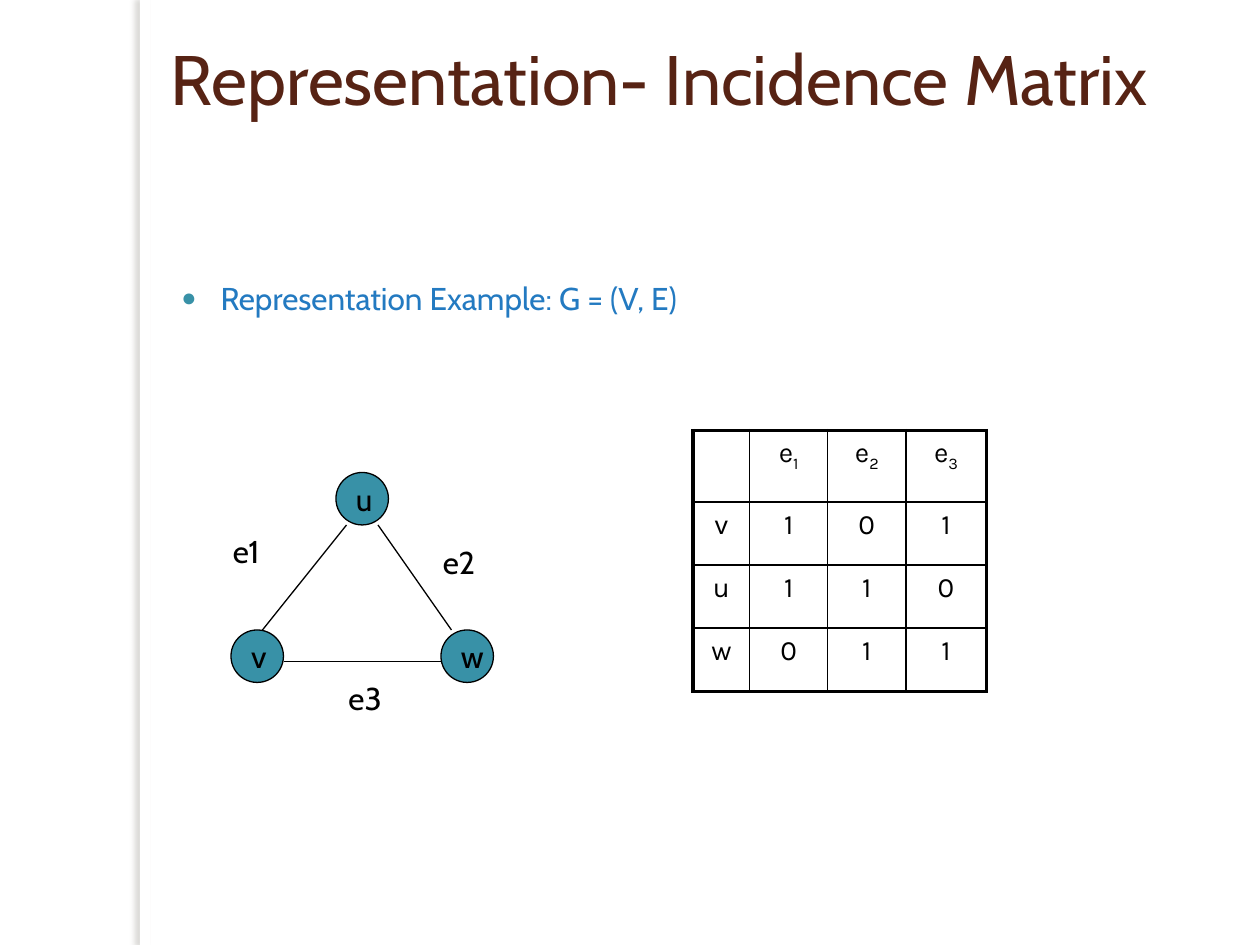
from lxml import etree
from pptx import Presentation
from pptx.dml.color import RGBColor
from pptx.enum.shapes import MSO_CONNECTOR, MSO_SHAPE
from pptx.enum.text import MSO_ANCHOR, MSO_AUTO_SIZE, PP_ALIGN
from pptx.oxml.ns import qn
from pptx.util import Pt

RECTANGLE, ELLIPSE = MSO_SHAPE.RECTANGLE, MSO_SHAPE.OVAL
STRAIGHT = MSO_CONNECTOR.STRAIGHT
TOP, MIDDLE = MSO_ANCHOR.TOP, MSO_ANCHOR.MIDDLE
LEFT, CENTER = PP_ALIGN.LEFT, PP_ALIGN.CENTER
NO_AUTOFIT = MSO_AUTO_SIZE.NONE

BLACK, WHITE, TEAL, BROWN, BLUE = "000000", "FFFFFF", "3891A7", "572314", "237AC1"


def rgb(hex_code):
    return RGBColor.from_string(hex_code)


def child(parent, tag, **attributes):
    element = etree.SubElement(parent, qn(tag))
    for key, value in attributes.items():
        element.set(key, str(value))
    return element


class SlideBuilder:
    text_font, table_font = "Cabin", "Karla"
    label_size, cell_size = 18, 16
    thin, inner, outer = 0.75, 1, 2.25

    def __init__(self, slide):
        self.slide = slide

    def run(self, paragraph, text, size, color, font=None):
        run = paragraph.add_run()
        run.text = text
        run.font.size = Pt(size)
        run.font.name = font or self.text_font
        run.font.color.rgb = rgb(color)
        return run

    def placeholder(self, index, box, text, size, color):
        holder = self.slide.placeholders[index]
        holder.left, holder.top, holder.width, holder.height = map(Pt, box)
        frame = holder.text_frame
        frame.word_wrap = True
        frame.auto_size = NO_AUTOFIT
        frame.vertical_anchor = TOP
        paragraph = frame.paragraphs[0]
        paragraph.alignment = LEFT
        paragraph.space_before = Pt(0)
        self.run(paragraph, text, size, color)
        return paragraph

    def bullet(self, paragraph, color, indent, hanging):
        properties = paragraph._p.get_or_add_pPr()
        properties.set("marL", str(Pt(indent)))
        properties.set("indent", str(-Pt(hanging)))
        child(child(properties, "a:buClr"), "a:srgbClr", val=color)
        child(properties, "a:buSzPct", val=80000)
        child(properties, "a:buChar", char="●")

    def shape(self, kind, box, fill, line=None, text=None):
        shape = self.slide.shapes.add_shape(kind, *map(Pt, box))
        shape.shadow.inherit = False
        shape.fill.solid()
        shape.fill.fore_color.rgb = rgb(fill)
        if line:
            shape.line.color.rgb = rgb(line)
            shape.line.width = Pt(self.thin)
        else:
            shape.line.fill.background()
        if text:
            frame = shape.text_frame
            frame.word_wrap = False
            frame.vertical_anchor = MIDDLE
            frame.paragraphs[0].alignment = LEFT
            self.run(frame.paragraphs[0], text, self.label_size, BLACK)
        return shape

    def side_strip(self, box):
        strip = self.shape(RECTANGLE, box, WHITE)
        effects = strip._element.spPr.find(qn("a:effectLst"))
        shadow = child(effects, "a:outerShdw", blurRad=Pt(3), dist=Pt(3),
                       dir=180 * 60000, algn="ctr", rotWithShape=0)
        child(child(shadow, "a:srgbClr", val="736F63"), "a:alpha", val=25000)

    def edge(self, start, end):
        line = self.slide.shapes.add_connector(STRAIGHT, *map(Pt, start + end))
        line.line.color.rgb = rgb(BLACK)
        line.line.width = Pt(self.thin)
        child(line._element.spPr, "a:effectLst")

    def cell_borders(self, cell, widths):
        properties = cell._tc.get_or_add_tcPr()
        for position, (side, width) in enumerate(zip("LRTB", widths)):
            border = child(properties, f"a:ln{side}", w=Pt(width))
            child(child(border, "a:solidFill"), "a:srgbClr", val=BLACK)
            properties.insert(position, border)

    def matrix(self, left, top, column_widths, row_heights, rows):
        box = left, top, sum(column_widths), sum(row_heights)
        table = self.slide.shapes.add_table(
            len(rows), len(column_widths), *map(Pt, box)).table
        table.first_row = table.horz_banding = False
        for column, width in zip(table.columns, column_widths):
            column.width = Pt(width)
        for row, height in zip(table.rows, row_heights):
            row.height = Pt(height)
        last_row, last_column = len(rows) - 1, len(column_widths) - 1
        for r, row in enumerate(rows):
            for c, text in enumerate(row):
                cell = table.cell(r, c)
                cell.fill.background()
                on_edge = c == 0, c == last_column, r == 0, r == last_row
                self.cell_borders(
                    cell, [self.outer if edge else self.inner for edge in on_edge])
                paragraph = cell.text_frame.paragraphs[0]
                paragraph.alignment = CENTER
                # Everything after the first character is a subscript
                for part, baseline in ((text[:1], 0), (text[1:], -25000)):
                    if part:
                        run = self.run(paragraph, part, self.cell_size, BLACK,
                                       self.table_font)
                        run.font._element.set("baseline", str(baseline))


def main():
    deck = Presentation()
    deck.slide_width, deck.slide_height = Pt(720), Pt(540)
    builder = SlideBuilder(deck.slides.add_slide(deck.slide_layouts[1]))

    # Side strip, title and bullet
    builder.side_strip((80, 0, 6, 540))
    builder.placeholder(0, (90.5, 16.5, 613.5, 115),
                        "Representation- Incidence Matrix", 40, BROWN)
    example = builder.placeholder(1, (90, 156, 459, 48),
                                  "Representation Example: G = (V, E)", 18, BLUE)
    builder.bullet(example, TEAL, 28.8, 22.3)

    # Graph: vertices, edges, edge labels
    for vertex, x, y in (("v", 132, 360), ("w", 252, 360), ("u", 192, 270)):
        builder.shape(ELLIPSE, (x, y, 30, 30), TEAL, BLACK, vertex)
    for start, end in (((216, 300), (258, 360)),
                       ((162, 378), (252, 378)),
                       ((198, 300), (150, 360))):
        builder.edge(start, end)
    for label, x, y in (("e1", 126, 306), ("e3", 192, 390), ("e2", 246, 312)):
        builder.shape(RECTANGLE, (x, y, 24, 18), WHITE, WHITE, label)

    # Incidence matrix
    builder.matrix(396, 246, (32.4, 44.6, 44.6, 46), (41, 36, 36, 36),
                   (("", "e1", "e2", "e3"), "v101", "u110", "w011"))

    deck.save("out.pptx")


if __name__ == "__main__":
    main()
